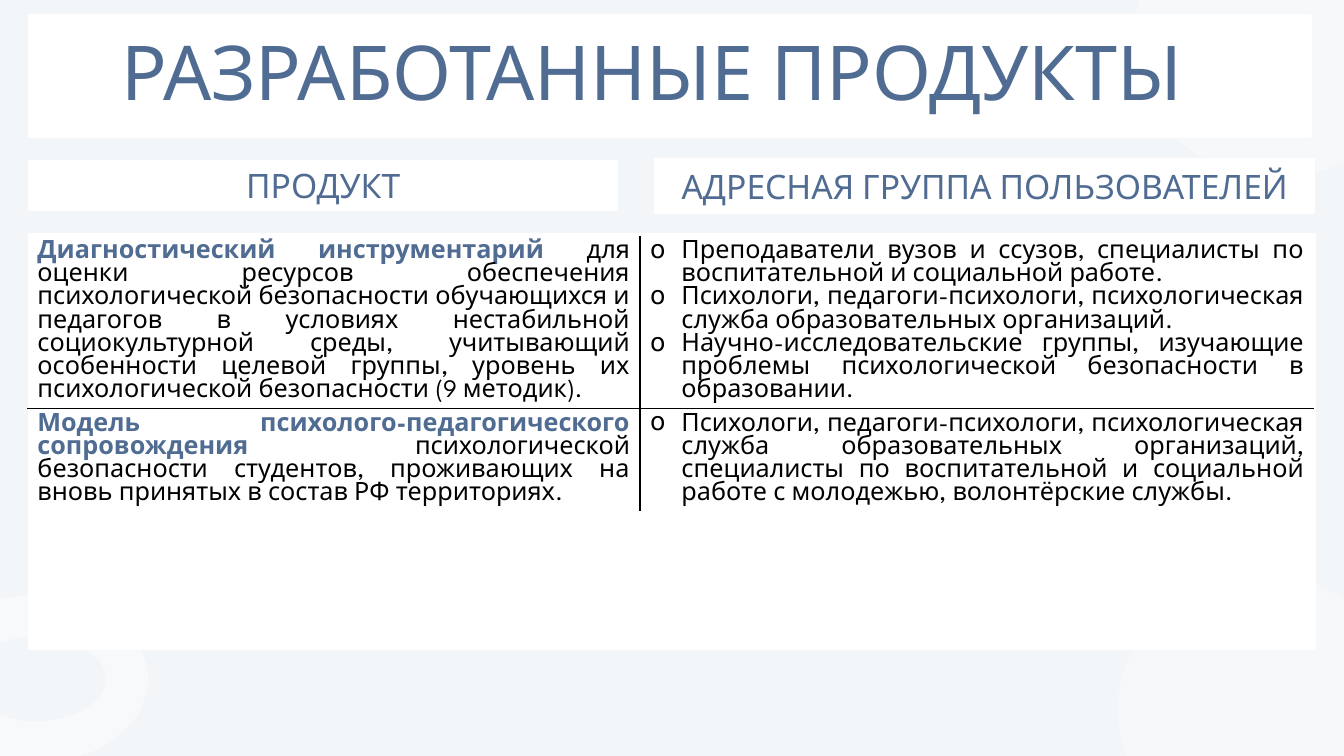
"""Build the slide that lists developed products and their user groups."""
from dataclasses import dataclass

from lxml import etree
from pptx import Presentation
from pptx import util as u
from pptx.dml.color import RGBColor
from pptx.enum import shapes, text
from pptx.oxml import ns


@dataclass(frozen=True)
class Theme:
    back: str = "F2F6F9"
    white: str = "FFFFFF"
    blue: str = "506C92"
    black: str = "000000"
    head: str = "Karla"
    body: str = "League Spartan"
    title: int = 54
    label: int = 24
    small: int = 18
    rule: float = 1
    edge: float = 1.5
    indent: float = 0.79


@dataclass(frozen=True)
class Box:
    left: float
    top: float
    width: float
    height: float
    words: str = ""


@dataclass(frozen=True)
class Blob:
    kind: shapes.MSO_SHAPE
    box: Box
    alpha: int


@dataclass(frozen=True)
class Row:
    height: float
    name: str
    about: str
    users: tuple[str, ...]


THEME = Theme()
SHAPE = shapes.MSO_SHAPE
ALIGN = text.PP_ALIGN
BLOBS = (
    Blob(SHAPE.DONUT, Box(-1.93, 14.99, 5.66, 4.24), 43),
    Blob(SHAPE.OVAL, Box(28.17, 14.48, 7.26, 6.83), 33),
    Blob(SHAPE.OVAL, Box(28.55, -2.36, 7.26, 6.83), 33),
)
PANELS = (
    Box(0.74, 0.38, 32.31, 3.07),
    Box(0.74, 4.06, 14.81, 1.22, "ПРОДУКТ"),
    Box(0.74, 5.89, 32.41, 10.46),
    Box(16.51, 4.01, 16.61, 1.35, "АДРЕСНАЯ ГРУППА ПОЛЬЗОВАТЕЛЕЙ"),
)
TITLE = Box(2.08, 0.86, 28.7, 2.11, "РАЗРАБОТАННЫЕ ПРОДУКТЫ")
COLS = (15.44, 16.99)
ROWS = (
    Row(4.34, "Диагностический инструментарий ",
        "для оценки ресурсов обеспечения психологической безопасности "
        "обучающихся и педагогов в условиях нестабильной социокультурной "
        "среды, учитывающий особенности целевой группы, уровень их "
        "психологической безопасности (9 методик).",
        ("Преподаватели вузов и ссузов, специалисты по воспитательной и "
         "социальной работе.",
         "Психологи, педагоги-психологи, психологическая служба "
         "образовательных организаций.",
         "Научно-исследовательские группы, изучающие проблемы "
         "психологической безопасности в образовании.")),
    Row(2.59, "Модель психолого-педагогического сопровождения ",
        "психологической безопасности студентов, проживающих на вновь "
        "принятых в состав РФ территориях.",
        ("Психологи, педагоги-психологи, психологическая служба "
         "образовательных организаций, специалисты по воспитательной и "
         "социальной работе с молодежью, волонтёрские службы.",)),
)


def tint(code: str) -> RGBColor:
    """Turn a hex code into a colour."""
    return RGBColor.from_string(code)


def place(box: Box) -> tuple[u.Cm, ...]:
    """Give the four lengths of a box."""
    return tuple(u.Cm(n) for n in (box.left, box.top, box.width, box.height))


def add_run(para, words: str, font: str, size: int, hue: str,
            bold: bool = False) -> None:
    """Add one styled run to a paragraph."""
    run = para.add_run()
    run.text = words
    run.font.name, run.font.size, run.font.bold = font, u.Pt(size), bold
    run.font.color.rgb = tint(hue)


def add_form(slide, kind: shapes.MSO_SHAPE, box: Box):
    """Add a plain white shape."""
    form = slide.shapes.add_shape(kind, *place(box))
    form.shadow.inherit = False
    form.fill.solid()
    form.fill.fore_color.rgb = tint(THEME.white)
    return form


def add_blob(slide, blob: Blob) -> None:
    """Add a see-through background shape."""
    form = add_form(slide, blob.kind, blob.box)
    form.line.fill.background()
    hue = form.element.find(".//" + ns.qn("a:srgbClr"))
    etree.SubElement(hue, ns.qn("a:alpha"), val=str(blob.alpha * 1000))


def add_panel(slide, box: Box) -> None:
    """Add a white panel with its label, if any."""
    form = add_form(slide, SHAPE.RECTANGLE, box)
    form.line.color.rgb = tint(THEME.white)
    form.line.width = u.Pt(THEME.edge)
    if box.words:
        frame = form.text_frame
        frame.word_wrap = True
        frame.vertical_anchor = text.MSO_ANCHOR.MIDDLE
        para = frame.paragraphs[0]
        para.alignment = ALIGN.CENTER
        add_run(para, box.words, THEME.head, THEME.label, THEME.blue)


def set_title(slide) -> None:
    """Place the title in front of the panels and fill it."""
    title = slide.shapes.title
    title.element.getparent().append(title.element)
    title.left, title.top, title.width, title.height = place(TITLE)
    frame = title.text_frame
    frame.auto_size = text.MSO_AUTO_SIZE.NONE
    frame.word_wrap = True
    frame.vertical_anchor = text.MSO_ANCHOR.MIDDLE
    para = frame.paragraphs[0]
    para.alignment, para.line_spacing = ALIGN.CENTER, 0.9
    add_run(para, TITLE.words, THEME.head, THEME.title, THEME.blue)


def set_rules(cell, sides: str) -> None:
    """Rule the named sides of a cell and clear the others."""
    props = cell._tc.get_or_add_tcPr()
    for side in "LRTB":
        line = etree.SubElement(props, ns.qn("a:ln" + side),
                                w=str(u.Pt(THEME.rule)))
        if side in sides:
            fill = etree.SubElement(line, ns.qn("a:solidFill"))
            etree.SubElement(fill, ns.qn("a:srgbClr"), val=THEME.black)
        else:
            etree.SubElement(line, ns.qn("a:noFill"))
    cell.fill.background()


def set_bullet(para) -> None:
    """Give a paragraph a hanging bullet."""
    para.level = 1
    props = para._p.get_or_add_pPr()
    props.set("marL", str(u.Cm(THEME.indent)))
    props.set("indent", str(-u.Cm(THEME.indent)))
    etree.SubElement(props, ns.qn("a:buChar"), char="o")


def add_grid(slide) -> None:
    """Add the table of products and users."""
    box = Box(0.69, 5.94, sum(COLS), sum(row.height for row in ROWS))
    grid = slide.shapes.add_table(len(ROWS), len(COLS), *place(box)).table
    grid.first_row = grid.horz_banding = False
    for col, width in zip(grid.columns, COLS):
        col.width = u.Cm(width)
    for i, row in enumerate(ROWS):
        grid.rows[i].height = u.Cm(row.height)
        left, right = grid.cell(i, 0), grid.cell(i, 1)
        inner = "T" if i else "B"
        set_rules(left, "R" + inner)
        set_rules(right, "L" + inner)
        para = left.text_frame.paragraphs[0]
        para.alignment = ALIGN.JUSTIFY
        add_run(para, row.name, THEME.body, THEME.small, THEME.blue, True)
        add_run(para, row.about, THEME.body, THEME.small, THEME.black)
        frame = right.text_frame
        for k, words in enumerate(row.users):
            para = frame.add_paragraph() if k else frame.paragraphs[0]
            para.alignment = ALIGN.JUSTIFY
            set_bullet(para)
            add_run(para, words, THEME.body, THEME.small, THEME.black)


def main() -> None:
    """Build and save the slide."""
    deck = Presentation()
    deck.slide_width, deck.slide_height = u.Cm(33.87), u.Cm(19.05)
    slide = deck.slides.add_slide(deck.slide_layouts[5])
    slide.background.fill.solid()
    slide.background.fill.fore_color.rgb = tint(THEME.back)
    for blob in BLOBS:
        add_blob(slide, blob)
    for box in PANELS:
        add_panel(slide, box)
    set_title(slide)
    add_grid(slide)
    deck.save("out.pptx")


if __name__ == "__main__":
    main()
